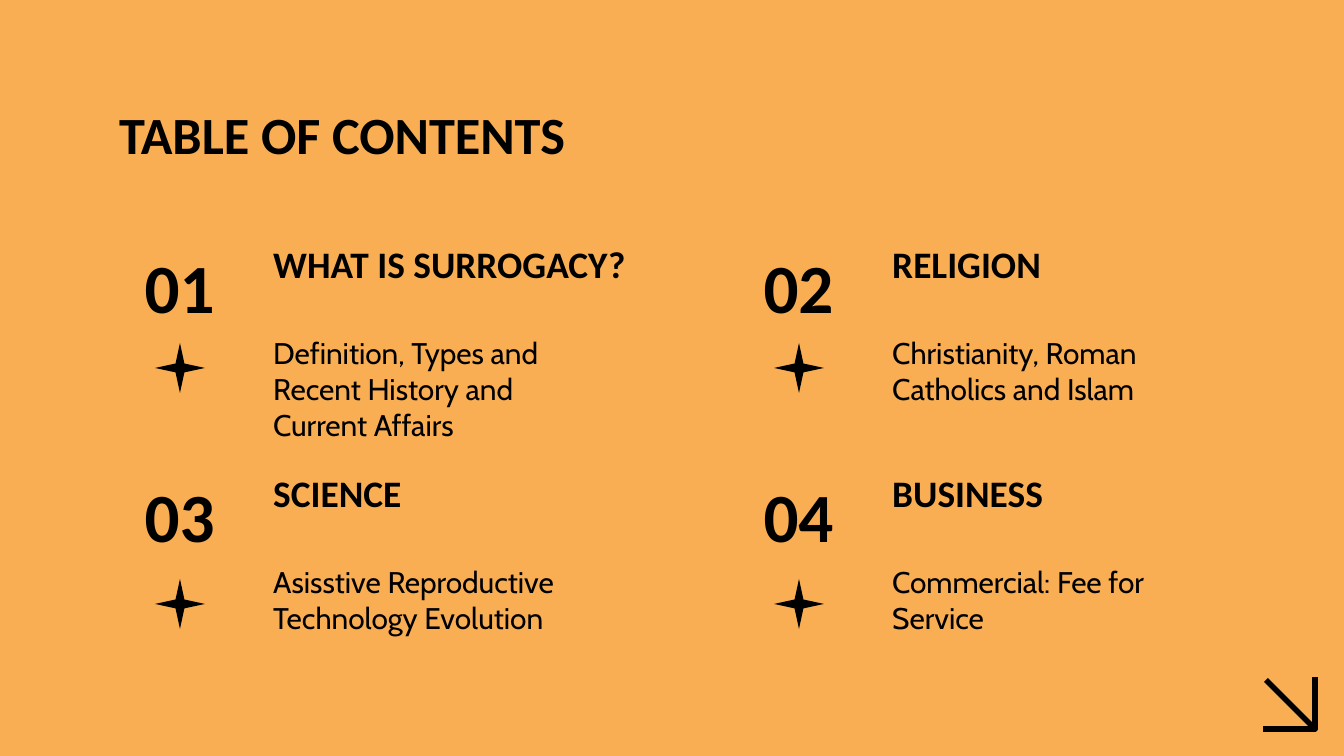
import dataclasses

import pptx
import pptx.dml.color
import pptx.enum.shapes
import pptx.enum.text
import pptx.oxml.ns
import pptx.util

EMU_PER_PX = 914400 / 134.4
MSO_ANCHOR = pptx.enum.text.MSO_ANCHOR
PP_ALIGN = pptx.enum.text.PP_ALIGN


@dataclasses.dataclass(frozen=True)
class Theme:
    background: str = "F9AE54"
    ink: str = "000000"
    heading_font: str = "Calibri"
    body_font: str = "Cabin"
    title_size: int = 28
    number_size: int = 37
    heading_size: int = 20
    body_size: int = 16
    line_width: int = 3


THEME = Theme()
COLUMNS = (99, 718)
ROWS = ((241, 343), (470, 579))  # top of the text, top of the star
TOPICS = (
    ("WHAT IS SURROGACY?",
     "Definition, Types and Recent History and Current Affairs"),
    ("RELIGION", "Christianity, Roman Catholics and Islam"),
    ("SCIENCE", "Asisstive Reproductive Technology Evolution"),
    ("BUSINESS", "Commercial: Fee for Service"),
)


def px(n):
    return pptx.util.Emu(round(n * EMU_PER_PX))


def rgb(color):
    return pptx.dml.color.RGBColor.from_string(color)


def add_text(s, text, box, size, font=THEME.heading_font, bold=True,
             align=PP_ALIGN.LEFT, anchor=MSO_ANCHOR.TOP):
    sp = s.shapes.add_textbox(*map(px, box))
    tf = sp.text_frame
    tf.word_wrap = True
    tf.vertical_anchor = anchor
    tf.margin_top = tf.margin_bottom = 0
    p = tf.paragraphs[0]
    p.text = text
    p.alignment = align
    r = p.runs[0]
    r.font.name = font
    r.font.size = pptx.util.Pt(size)
    r.font.bold = bold
    r.font.color.rgb = rgb(THEME.ink)


def add_star(s, x, y, size=50):
    sp = s.shapes.add_shape(
        pptx.enum.shapes.MSO_SHAPE.STAR_4_POINT, px(x), px(y), px(size), px(size))
    sp.adjustments[0] = 0.125
    sp.shadow.inherit = False
    sp.fill.solid()
    sp.fill.fore_color.rgb = rgb(THEME.ink)
    sp.line.fill.background()


def style_line(sp):
    sp.line.color.rgb = rgb(THEME.ink)
    sp.line.width = pptx.util.Pt(THEME.line_width)


def add_corner_arrow(s, left=1263, top=677, size=52, inset=3):
    """Draw an arrow that points to the lower right."""
    right, bottom = left + size, top + size
    builder = s.shapes.build_freeform(right, top, scale=EMU_PER_PX)
    builder.add_line_segments([(right, bottom), (left, bottom)], close=False)
    head = builder.convert_to_shape()
    head.shadow.inherit = False
    head.fill.background()
    style_line(head)

    shaft = s.shapes.add_connector(
        pptx.enum.shapes.MSO_CONNECTOR.STRAIGHT,
        px(right), px(bottom), px(left + inset), px(top + inset))
    style_line(shaft)
    pptx.oxml.ns.qn("a:effectLst")
    shaft.element.spPr.append(pptx.oxml.xmlchemy.OxmlElement("a:effectLst"))


def add_topic(s, number, heading, body, x, y, star_y):
    text_x = x + 161
    add_text(s, f"{number:02d}", (x, y, 161, 86), THEME.number_size,
             align=PP_ALIGN.CENTER, anchor=MSO_ANCHOR.BOTTOM)
    add_text(s, heading, (text_x, y, 399, 86), THEME.heading_size)
    add_text(s, body, (text_x, y + 94, 359, 79), THEME.body_size,
             font=THEME.body_font, bold=False)
    add_star(s, x + 56, star_y)


def main():
    prs = pptx.Presentation()
    prs.slide_width, prs.slide_height = px(1344), px(756)
    s = prs.slides.add_slide(prs.slide_layouts[6])
    s.background.fill.solid()
    s.background.fill.fore_color.rgb = rgb(THEME.background)

    add_corner_arrow(s)
    add_text(s, "TABLE OF CONTENTS", (106, 102, 1133, 63), THEME.title_size)
    for i, (heading, body) in enumerate(TOPICS):
        row, column = divmod(i, len(COLUMNS))
        add_topic(s, i + 1, heading, body, COLUMNS[column], *ROWS[row])
    prs.save("out.pptx")


if __name__ == "__main__":
    main()
